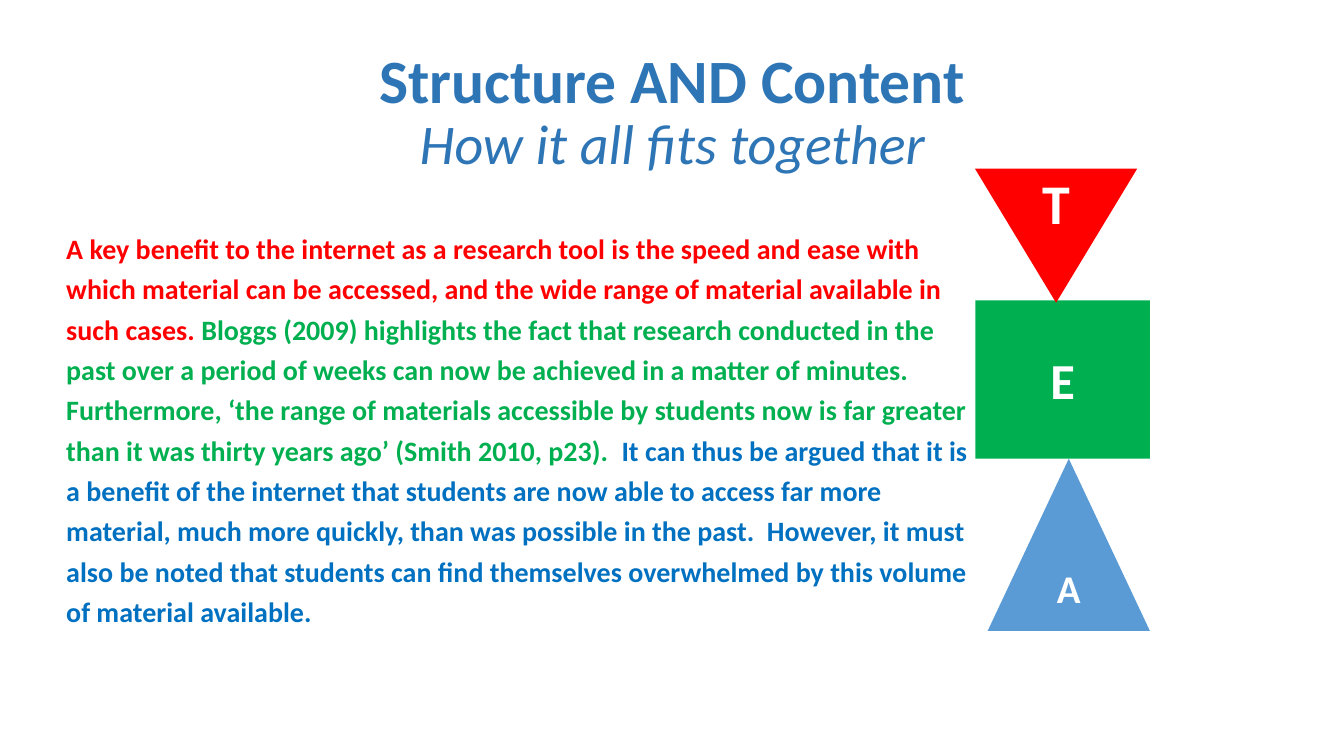
from dataclasses import dataclass

from pptx import Presentation
from pptx.dml.color import RGBColor
from pptx.enum.shapes import MSO_SHAPE
from pptx.enum.text import MSO_ANCHOR, MSO_AUTO_SIZE, PP_ALIGN
from pptx.util import Cm, Pt

RECTANGLE = MSO_SHAPE.RECTANGLE
TRIANGLE = MSO_SHAPE.ISOSCELES_TRIANGLE
MERGE = MSO_SHAPE.FLOWCHART_MERGE
CENTER = PP_ALIGN.CENTER
MIDDLE = MSO_ANCHOR.MIDDLE
GROW = MSO_AUTO_SIZE.SHAPE_TO_FIT_TEXT
NO_FIT = MSO_AUTO_SIZE.NONE
TITLE_ONLY = 5


@dataclass(frozen=True)
class Theme:
    """Font, colours and type sizes of the slide."""

    font: str = "Calibri"
    title: str = "2E75B6"
    topic: str = "FF0000"
    evidence: str = "00B050"
    analysis: str = "0070C0"
    analysis_shape: str = "5B9BD5"
    letter: str = "FFFFFF"
    title_size: int = 44
    subtitle_size: int = 40
    body_size: int = 20


THEME = Theme()
TITLE = "Structure AND Content"
SUBTITLE = "How it all fits together"
TITLE_AREA = (2.34, 1.02, 29.21, 3.68)
BODY_AREA = (1.42, 5.54, 23.3, 10.52)
BODY = [
    ("A key benefit to the internet as a research tool is the speed and ease with which "
     "material can be accessed, and the wide range of material available in such cases. ",
     THEME.topic),
    ("Bloggs (2009) highlights the fact that research conducted in the past over a period "
     "of weeks can now be achieved in a matter of minutes. Furthermore, ‘the range of "
     "materials accessible by students now is far greater than it was thirty years ago’ "
     "(Smith 2010, p23).  ", THEME.evidence),
    ("It can thus be argued that it is a benefit of the internet that students are now able "
     "to access far more material, much more quickly, than was possible in the past.  "
     "However, it must also be noted that students can find themselves overwhelmed by this "
     "volume of material available.", THEME.analysis),
]
LETTERS = [
    ("E", RECTANGLE, (24.58, 7.57, 4.4, 3.99), THEME.evidence, 36),
    ("A", TRIANGLE, (24.89, 11.56, 4.09, 4.34), THEME.analysis_shape, 28),
    ("T", MERGE, (24.57, 4.25, 4.09, 3.38), THEME.topic, 40),
]


def lengths(area):
    """Turn left, top, width and height into lengths."""
    return [Cm(value) for value in area]


def style(font, size, color, bold=None):
    """Set the face, size, colour and weight of a font."""
    font.name = THEME.font
    font.size = Pt(size)
    font.color.rgb = RGBColor.from_string(color)
    font.bold = bold


def add_span(para, text):
    """Append a run of text and return it."""
    span = para.add_run()
    span.text = text
    return span


def fill_title(title):
    """Place the title and write its two lines."""
    title.left, title.top, title.width, title.height = lengths(TITLE_AREA)
    frame = title.text_frame
    frame.vertical_anchor = MIDDLE
    frame.auto_size = NO_FIT
    para = frame.paragraphs[0]
    para.alignment = CENTER
    para.line_spacing = 0.9
    style(add_span(para, TITLE).font, THEME.title_size, THEME.title, True)
    para.add_line_break()
    subtitle = add_span(para, SUBTITLE)
    style(subtitle.font, THEME.subtitle_size, THEME.title, False)
    subtitle.font.italic = True


def add_body(page):
    """Add the sample paragraph with one colour per part."""
    frame = page.shapes.add_textbox(*lengths(BODY_AREA)).text_frame
    frame.word_wrap = True
    frame.auto_size = GROW
    para = frame.paragraphs[0]
    para.line_spacing = 1.2
    for text, color in BODY:
        style(add_span(para, text).font, THEME.body_size, color, True)


def add_letter(page, letter, kind, area, color, size):
    """Add one filled shape with its letter."""
    shape = page.shapes.add_shape(kind, *lengths(area))
    shape.shadow.inherit = False
    shape.fill.solid()
    shape.fill.fore_color.rgb = RGBColor.from_string(color)
    shape.line.fill.background()
    shape.text_frame.vertical_anchor = MIDDLE
    para = shape.text_frame.paragraphs[0]
    para.alignment = CENTER
    add_span(para, letter)
    style(para.font, size, THEME.letter, True)


def main():
    """Build the slide and save the deck."""
    deck = Presentation()
    deck.slide_width, deck.slide_height = Cm(33.87), Cm(19.05)
    page = deck.slides.add_slide(deck.slide_layouts[TITLE_ONLY])
    fill_title(page.shapes.title)
    add_body(page)
    for item in LETTERS:
        add_letter(page, *item)
    deck.save("out.pptx")


if __name__ == "__main__":
    main()
